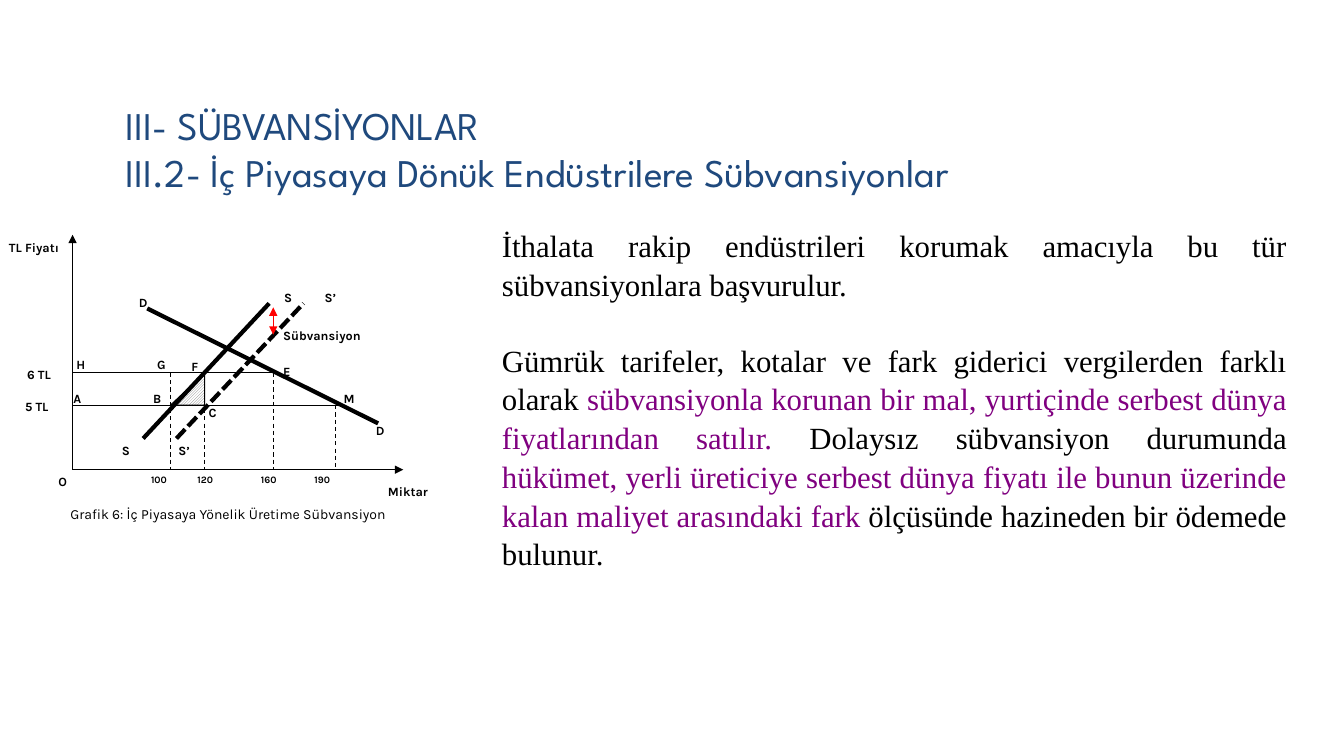
from pptx import Presentation, util as u
from pptx.dml.color import RGBColor
from pptx.enum import dml, shapes, text
from pptx.oxml.ns import qn
from lxml import etree

COLS, ROWS = 133.3, 75
BLACK, PURPLE, NAVY, RED = "000000", "800080", "1F497D", "FF0000"


def rgb(value):
    return RGBColor.from_string(value)


class Board:
    font, size, pen = "Karla", 9, 0.75

    def __init__(self, prs):
        self.s = prs.slides.add_slide(prs.slide_layouts[6])
        self.cell_w = prs.slide_width / COLS
        self.cell_h = prs.slide_height / ROWS

    def place(self, x, y):
        return u.Emu(round(x * self.cell_w)), u.Emu(round(y * self.cell_h))

    def textbox(self, x, y, w, h, paragraphs, size=None, font=None, bold=False,
                align=text.PP_ALIGN.LEFT, anchor=text.MSO_ANCHOR.TOP,
                spacing=1.0, gap=0):
        sp = self.s.shapes.add_textbox(*self.place(x, y), *self.place(w, h))
        tf = sp.text_frame
        tf.word_wrap = True
        tf.vertical_anchor = anchor
        for i, runs in enumerate(paragraphs):
            p = tf.add_paragraph() if i else tf.paragraphs[0]
            p.alignment, p.line_spacing = align, spacing
            p.space_before = u.Pt(gap if i else 0)
            for words, color in runs:
                if words == "\n":
                    p.add_line_break()
                    continue
                r = p.add_run()
                r.text = words
                r.font.name = font or self.font
                r.font.size = u.Pt(size or self.size)
                r.font.bold = bold
                r.font.color.rgb = rgb(color)

    def label(self, words, x, y, w=2.9, size=None):
        self.textbox(x, y, w, 2.5, [[(words, BLACK)]], size=size, bold=True)

    def line(self, x1, y1, x2, y2, color=BLACK, width=None, dash=None,
             head=False, tail=False):
        c = self.s.shapes.add_connector(
            shapes.MSO_CONNECTOR.STRAIGHT, *self.place(x1, y1), *self.place(x2, y2))
        c.line.color.rgb = rgb(color)
        c.line.width = u.Pt(width or self.pen)
        if dash:
            c.line.dash_style = dash
        ln = c._element.spPr.find(qn("a:ln"))
        for tag, shown in (("a:headEnd", head), ("a:tailEnd", tail)):
            if shown:
                etree.SubElement(ln, qn(tag), type="triangle")
        etree.SubElement(c._element.spPr, qn("a:effectLst"))

    def hatched_triangle(self, x, y, w, h, ink, paper, rotation):
        sp = self.s.shapes.add_shape(
            shapes.MSO_SHAPE.RIGHT_TRIANGLE, *self.place(x, y), *self.place(w, h))
        sp.rotation = rotation
        sp.shadow.inherit = False
        sp.fill.patterned()
        sp.fill.pattern = dml.MSO_PATTERN.DARK_UPWARD_DIAGONAL
        sp.fill.fore_color.rgb = rgb(ink)
        sp.fill.back_color.rgb = rgb(paper)
        sp.line.color.rgb = rgb(BLACK)
        sp.line.width = u.Pt(self.pen)


def draw_market(b):
    axis, base, high, low = 7.2, 46.6, 37, 40.2
    dash, square_dash = dml.MSO_LINE.DASH, dml.MSO_LINE.SQUARE_DOT

    b.line(axis, base, 40, base, tail=True)
    b.line(axis, base, axis, 23.3, tail=True)
    b.line(axis, high, 27.2, high)
    b.line(axis, low, 33.5, low)

    quantities = (("100", 16.9, high, 14), ("120", 20.3, high, 18.6),
                  ("160", 27.1, high, 24.9), ("190", 33.3, low, 30.2))
    for amount, x, top, label_x in quantities:
        b.line(x, top, x, base, dash=dash)
        b.label(amount, label_x, 46.5, 7, size=7)

    b.hatched_triangle(17, 36.9, 3.2, 3.4, "777777", "FFFFFF", 270)
    b.line(14.2, 43.5, 26.7, 30.1, width=3)
    b.line(14.6, 30.6, 37.5, 42, width=3)
    b.line(17.5, 43.5, 30.1, 30.1, width=3, dash=square_dash)
    b.line(27.1, 30.5, 27.1, 33.2, RED, head=True, tail=True)

    points = (("S", 27.2, 28.3), ("S", 11.1, 43.4), ("D", 12.8, 28.8),
              ("D", 36.3, 41.5), ("H", 6.6, 34.9), ("G", 14.6, 34.9),
              ("F", 18, 35.1), ("E", 27.1, 35.6), ("A", 6.3, 38.3),
              ("B", 14.2, 38.3), ("C", 19.7, 39.7), ("M", 33.1, 38.3),
              ("O", 4.8, 46.5))
    for name, x, y in points:
        b.label(name, x, y)

    captions = (("S’", 31.2, 28.3, 5.2), ("S’", 16.7, 43.4, 6.2),
                ("6 TL", 1.7, 35.9, 6.3), ("5 TL", 1.5, 39.1, 9.4),
                ("TL Fiyatı", -0.1, 23.3, 9.1), ("Miktar", 37.5, 47.5, 10.3),
                ("Sübvansiyon", 27.1, 32, 15.6))
    for caption in captions:
        b.label(*caption)

    b.textbox(6, 49.7, 33.2, 2.7,
              [[("Grafik 6: İç Piyasaya Yönelik Üretime Sübvansiyon", BLACK)]],
              size=10)


def main():
    prs = Presentation()
    prs.slide_width, prs.slide_height = u.Inches(13.33), u.Inches(7.5)
    b = Board(prs)
    b.textbox(11.5, 3.9, 121.1, 16,
              [[("III- SÜBVANSİYONLAR", NAVY), ("\n", NAVY),
                ("III.2- İç Piyasaya Dönük Endüstrilere Sübvansiyonlar", NAVY)]],
              size=28, font="League Spartan", anchor=text.MSO_ANCHOR.BOTTOM)
    b.textbox(48.8, 21.8, 79.8, 34.3, [
        [("İthalata rakip endüstrileri korumak amacıyla bu tür "
          "sübvansiyonlara başvurulur.", BLACK)],
        [("Gümrük tarifeler, kotalar ve fark giderici vergilerden farklı olarak ", BLACK),
         ("sübvansiyonla korunan bir mal, yurtiçinde serbest dünya "
          "fiyatlarından satılır.", PURPLE),
         (" Dolaysız sübvansiyon durumunda ", BLACK),
         ("hükümet, yerli üreticiye serbest dünya fiyatı ile bunun üzerinde "
          "kalan maliyet arasındaki fark", PURPLE),
         (" ölçüsünde hazineden bir ödemede bulunur.", BLACK)],
    ], size=22, font="Times New Roman", align=text.PP_ALIGN.JUSTIFY,
        spacing=1.05, gap=26.6)
    draw_market(b)
    prs.save("out.pptx")


if __name__ == "__main__":
    main()
